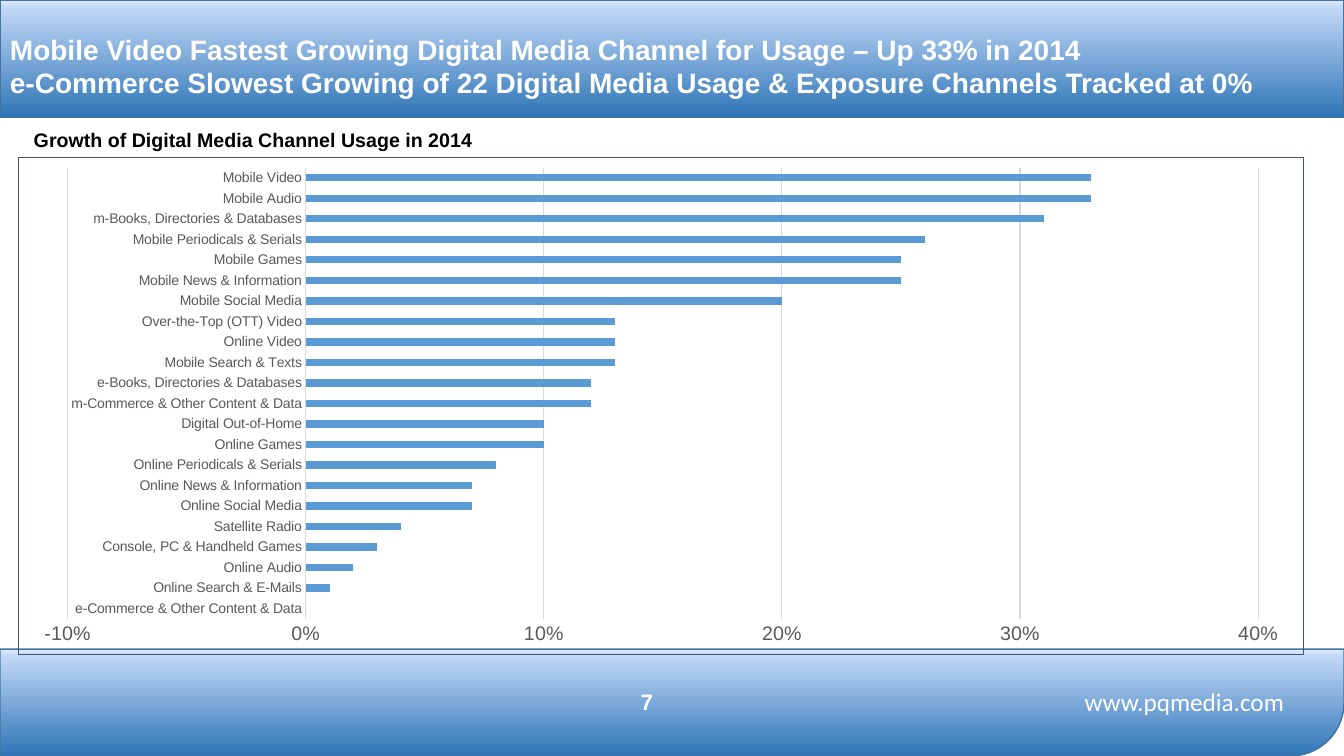
from math import cos, pi, sin

from pptx import Presentation
from pptx.chart.data import CategoryChartData as ChartData
from pptx.dml.color import RGBColor
from pptx.enum.chart import XL_CHART_TYPE as Kind, XL_TICK_MARK as Tick
from pptx.enum.shapes import MSO_SHAPE as Shape
from pptx.enum.text import MSO_ANCHOR as Anchor, PP_ALIGN as Align
from pptx.oxml import parse_xml
from pptx.oxml.ns import nsdecls, qn
from pptx.util import Pt

WIDE, HIGH = 960, 540
FOOT_TOP = 463.7
WHITE, BLACK, GREY = "FFFFFF", "000000", "595959"
STOPS = [(0, "2E75B6"), (94, "C2D8F8"), (100, "E1EBFB")]
GROWTH = [
    ("e-Commerce & Other Content & Data", 0),
    ("Online Search & E-Mails", 0.01),
    ("Online Audio", 0.02),
    ("Console, PC & Handheld Games", 0.03),
    ("Satellite Radio", 0.04),
    ("Online Social Media", 0.07),
    ("Online News & Information", 0.07),
    ("Online Periodicals & Serials", 0.08),
    ("Online Games", 0.1),
    ("Digital Out-of-Home", 0.1),
    ("m-Commerce & Other Content & Data", 0.12),
    ("e-Books, Directories & Databases", 0.12),
    ("Mobile Search & Texts", 0.13),
    ("Online Video", 0.13),
    ("Over-the-Top (OTT) Video", 0.13),
    ("Mobile Social Media", 0.2),
    ("Mobile News & Information", 0.25),
    ("Mobile Games", 0.25),
    ("Mobile Periodicals & Serials", 0.26),
    ("m-Books, Directories & Databases", 0.31),
    ("Mobile Audio", 0.33),
    ("Mobile Video", 0.33),
]


def color(code):
    return RGBColor.from_string(code)


class Deck:
    """Holds the house style and the current slide."""
    face = "Arial"
    edge = "43739E"
    grid = "D9D9D9"
    bar = "5B9BD5"
    frame = "44546A"

    def __init__(self):
        self.show = Presentation()
        self.show.slide_width, self.show.slide_height = Pt(WIDE), Pt(HIGH)
        self.slide = self.show.slides.add_slide(self.show.slide_layouts[6])
        self.shapes = self.slide.shapes

    def paint(self, shape):
        """Give a band its outline and its bottom-to-top gradient."""
        shape.shadow.inherit = False
        shape.line.color.rgb = color(self.edge)
        shape.line.width = Pt(1)
        stops = "".join(
            f'<a:gs pos="{at * 1000}"><a:srgbClr val="{code}"/></a:gs>'
            for at, code in STOPS)
        shape.fill.gradient()
        old = shape._element.spPr.find(qn("a:gradFill"))
        old.getparent().replace(old, parse_xml(
            f'<a:gradFill {nsdecls("a")} rotWithShape="1"><a:gsLst>{stops}'
            '</a:gsLst><a:lin ang="16200000" scaled="0"/></a:gradFill>'))

    def header(self, high):
        self.paint(self.shapes.add_shape(
            Shape.RECTANGLE, 0, 0, Pt(WIDE), Pt(high)))

    def footer(self, top):
        """Draw a band with a round lower right corner."""
        size = (HIGH - top) / 2
        turns = [pi / 2 * step / 24 for step in range(25)]
        arc = [(WIDE - size + size * cos(turn), HIGH - size + size * sin(turn))
               for turn in turns]
        pen = self.shapes.build_freeform(0, Pt(top), scale=1.0)
        pen.add_line_segments(
            [(Pt(x), Pt(y)) for x, y in [(WIDE, top), *arc, (0, HIGH)]])
        self.paint(pen.convert_to_shape())

    def text(self, box, lines, size, ink=WHITE, bold=True, face=None,
             align=Align.LEFT, anchor=Anchor.TOP, wrap=True, inset=7.2):
        frame = self.shapes.add_textbox(*map(Pt, box)).text_frame
        frame.word_wrap = wrap
        frame.vertical_anchor = anchor
        frame.margin_left = Pt(inset)
        for spot, line in enumerate(lines):
            para = frame.add_paragraph() if spot else frame.paragraphs[0]
            para.alignment = align
            run = para.add_run()
            run.text = line
            self.font(run.font, size, ink, bold, face)

    def font(self, font, size, ink, bold=False, face=None):
        font.name = face or self.face
        font.size = Pt(size)
        font.bold = bold
        font.color.rgb = color(ink)

    def line(self, line):
        line.color.rgb = color(self.grid)
        line.width = Pt(0.75)

    def chart(self, box, rows):
        data = ChartData(number_format="0%")
        data.categories = [name for name, _ in rows]
        data.add_series("Series 1", [rate for _, rate in rows])
        chart = self.shapes.add_chart(
            Kind.BAR_CLUSTERED, *map(Pt, box), data).chart
        chart.has_legend = chart.has_title = False
        self.font(chart.font, 14, BLACK)
        plot = chart.plots[0]
        plot.gap_width = 182
        plot.vary_by_categories = False
        fill = plot.series[0].format.fill
        fill.solid()
        fill.fore_color.rgb = color(self.bar)

        names, rates = chart.category_axis, chart.value_axis
        for axis, size in ((names, 10), (rates, 14)):
            axis.major_tick_mark = axis.minor_tick_mark = Tick.NONE
            self.font(axis.tick_labels.font, size, GREY)
        names.has_major_gridlines = False
        self.line(names.format.line)
        rates.minimum_scale, rates.maximum_scale = -0.1, 0.4
        rates.major_unit = 0.1
        rates.tick_labels.number_format = "0%"
        rates.tick_labels.number_format_is_linked = False
        rates.format.line.fill.background()
        self.line(rates.major_gridlines.format.line)
        chart.element.find(qn("c:chart")).addnext(parse_xml(
            f'<c:spPr {nsdecls("c", "a")}><a:noFill/><a:ln w="{Pt(0.75)}">'
            f'<a:solidFill><a:srgbClr val="{self.frame}"/></a:solidFill>'
            '</a:ln></c:spPr>'))


def main():
    deck = Deck()
    deck.footer(FOOT_TOP)
    deck.header(84.2)
    deck.text((378, 486.7, 168, 29), ["7"], 16,
              align=Align.CENTER, anchor=Anchor.MIDDLE)
    deck.text((732, 486.7, 228, 29), ["www.pqmedia.com"], 18, bold=False,
              face="Calibri", align=Align.CENTER, anchor=Anchor.MIDDLE)
    deck.chart((13, 112.3, 918.7, 355.7), GROWTH)
    deck.text((13, 87.8, 340.6, 24.5),
              ["Growth of Digital Media Channel Usage in 2014"], 14,
              ink=BLACK, wrap=False, inset=11.1)
    deck.text((0, 19.5, WIDE, 48), [
        "Mobile Video Fastest Growing Digital Media Channel for Usage"
        " – Up 33% in 2014",
        "e-Commerce Slowest Growing of 22 Digital Media Usage & Exposure"
        " Channels Tracked at 0%",
    ], 20)
    deck.show.save("out.pptx")


if __name__ == "__main__":
    main()
